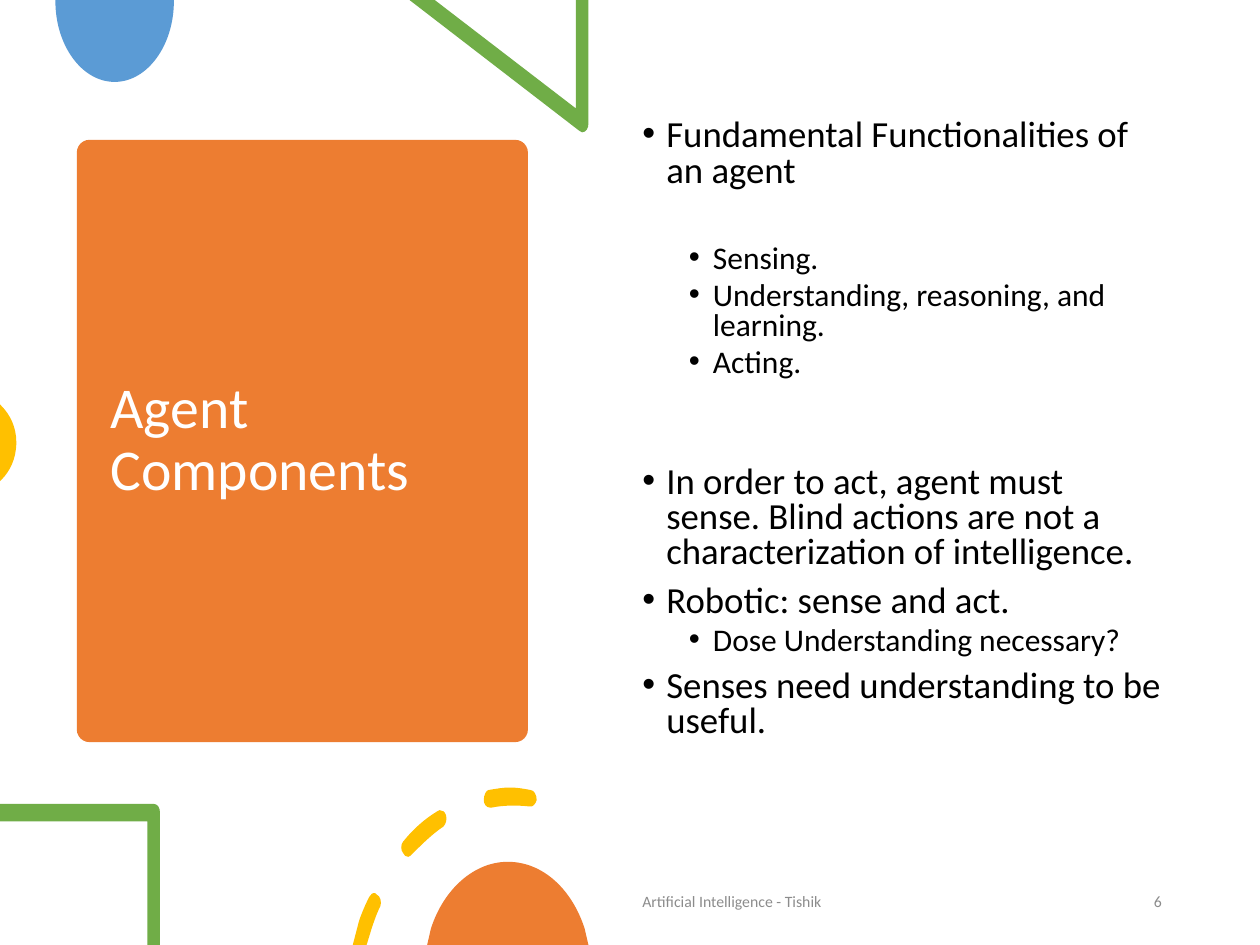
from pptx import Presentation
from pptx.dml.color import RGBColor
from pptx.enum.shapes import MSO_SHAPE as Shape
from pptx.enum.text import MSO_ANCHOR as Anchor, PP_ALIGN as Align
from pptx.util import Inches, Pt
from lxml.etree import SubElement
from pptx.oxml.ns import qn

FONT = "Calibri"
BLUE, GREEN, YELLOW, ORANGE = "5B9BD5", "70AD47", "FFC000", "ED7D31"
WHITE, BLACK, GRAY = "FFFFFF", "000000", "8C8C8C"

TITLE = "Agent Components"
FOOTER, PAGE = "Artificial Intelligence - Tishik", "6"

# Bullets: level, text, extra space above in points
BULLETS = [
    (0, "Fundamental Functionalities of an agent", 0),
    (1, "Sensing.", 27.5),
    (1, "Understanding, reasoning, and learning.", 0),
    (1, "Acting.", 0),
    (0, "In order to act, agent must sense. Blind actions are not a "
        "characterization of intelligence.", 42.2),
    (0, "Robotic: sense and act.", 0),
    (1, "Dose Understanding necessary?", 0),
    (0, "Senses need understanding to be useful.", 0),
]
# Per level: size, space before, left indent in inches
LEVELS = [(21, 7.5, 0.19), (18, 3.8, 0.56)]
HANGING = 0.19

# Decorations: colour and contours in inches; a pair is a corner,
# six numbers are a Bezier curve (two handles, then the end)
BLUE_DROP = (BLUE, [[
    (1.38, 0), (0.44, 0), (0.44, 0.01), (0.44, 0.36, 0.65, 0.65, 0.91, 0.65),
    (1.17, 0.65, 1.38, 0.36, 1.38, 0.01)]])
GREEN_TRIANGLE = (GREEN, [[
    (4.67, 0), (4.57, 0), (4.57, 0.86), (3.45, 0), (3.25, 0), (4.6, 1.04),
    (4.61, 1.05, 4.61, 1.05, 4.62, 1.05), (4.65, 1.05, 4.67, 1.02, 4.67, 0.98)]])
YELLOW_EDGE = (YELLOW, [[
    (0, 3.21), (0, 3.82), (0.01, 3.81), (0.08, 3.74, 0.13, 3.64, 0.13, 3.51),
    (0.13, 3.39, 0.08, 3.29, 0.01, 3.22)]])
GREEN_CORNER = (GREEN, [[
    (1.22, 6.38), (0, 6.38), (0, 6.52), (1.17, 6.52), (1.17, 7.5), (1.27, 7.5),
    (1.27, 6.45), (1.27, 6.41, 1.25, 6.38, 1.22, 6.38)]])
YELLOW_DASHES = (YELLOW, [
    [(2.98, 7.09), (2.96, 7.08, 2.94, 7.1, 2.93, 7.12),
     (2.9, 7.18, 2.87, 7.25, 2.85, 7.31), (2.8, 7.5), (2.91, 7.5), (2.95, 7.37),
     (2.97, 7.31, 2.99, 7.25, 3.02, 7.19), (3.03, 7.16, 3.02, 7.11, 2.99, 7.1),
     (2.99, 7.09, 2.98, 7.09, 2.98, 7.09)],
    [(3.49, 6.43), (3.48, 6.43, 3.48, 6.43, 3.47, 6.44),
     (3.37, 6.5, 3.28, 6.58, 3.2, 6.68), (3.18, 6.7, 3.18, 6.75, 3.2, 6.77),
     (3.21, 6.79, 3.22, 6.8, 3.24, 6.8), (3.24, 6.8),
     (3.25, 6.8, 3.26, 6.79, 3.27, 6.78), (3.35, 6.7, 3.43, 6.62, 3.52, 6.56),
     (3.54, 6.54, 3.55, 6.5, 3.54, 6.47), (3.53, 6.44, 3.51, 6.43, 3.49, 6.43)],
    [(4.05, 6.25), (3.99, 6.25, 3.94, 6.26, 3.88, 6.27),
     (3.86, 6.27, 3.84, 6.31, 3.84, 6.35), (3.84, 6.38, 3.86, 6.41, 3.89, 6.41),
     (3.89, 6.41, 3.9, 6.41, 3.9, 6.41), (4, 6.39, 4.1, 6.39, 4.2, 6.4),
     (4.23, 6.41, 4.25, 6.38, 4.26, 6.35), (4.26, 6.31, 4.24, 6.27, 4.21, 6.27),
     (4.21, 6.27, 4.21, 6.27, 4.21, 6.27), (4.16, 6.26, 4.1, 6.25, 4.05, 6.25)]])
ORANGE_DOME = (ORANGE, [[
    (4.03, 6.84), (3.76, 6.84, 3.52, 7.06, 3.42, 7.37), (3.39, 7.5), (4.67, 7.5),
    (4.64, 7.37), (4.54, 7.06, 4.31, 6.84, 4.03, 6.84)]])
DECORATIONS = [BLUE_DROP, GREEN_TRIANGLE, YELLOW_EDGE]
LOWER_DECORATIONS = [GREEN_CORNER, YELLOW_DASHES, ORANGE_DOME]


def rgb(color):
    return RGBColor.from_string(color)


def paint(shape, color):
    shape.shadow.inherit = False
    shape.fill.solid()
    shape.fill.fore_color.rgb = rgb(color)
    shape.line.fill.background()


def to_points(contour):
    return [(Inches(part[i]), Inches(part[i + 1]))
            for part in contour for i in range(0, len(part), 2)]


def bend_curves(shape, contours):
    """Join each curve's three line segments into one Bezier segment."""
    outline = next(shape._element.iter(qn("a:path")))
    segments = iter(list(outline))
    for contour in contours:
        for part in contour:
            segment = next(segments)
            if len(part) == 6:
                segment.tag = qn("a:cubicBezTo")
                for extra in (next(segments), next(segments)):
                    segment.append(extra[0])
                    outline.remove(extra)
        next(segments)  # the closing mark


def add_outline(slide, color, contours):
    first, *others = map(to_points, contours)
    builder = slide.shapes.build_freeform(*first[0])
    builder.add_line_segments(first[1:], close=True)
    for points in others:
        builder.move_to(*points[0])
        builder.add_line_segments(points[1:], close=True)
    shape = builder.convert_to_shape()
    bend_curves(shape, contours)
    paint(shape, color)


def add_text_box(slide, box, anchor=Anchor.MIDDLE):
    frame = slide.shapes.add_textbox(*map(Inches, box)).text_frame
    frame.word_wrap = True
    frame.vertical_anchor = anchor
    return frame


def write(paragraph, text, size, color):
    paragraph.text = text
    font = paragraph.font
    font.name, font.size, font.color.rgb = FONT, Pt(size), rgb(color)


def add_bullet(paragraph, indent):
    properties = paragraph._p.get_or_add_pPr()
    properties.set("marL", str(Inches(indent)))
    properties.set("indent", str(-Inches(HANGING)))
    SubElement(properties, qn("a:buFont")).set("typeface", "Arial")
    SubElement(properties, qn("a:buChar")).set("char", "•")


presentation = Presentation()
presentation.slide_width, presentation.slide_height = Inches(10), Inches(7.5)
slide = presentation.slides.add_slide(presentation.slide_layouts[6])

# Title panel
panel = slide.shapes.add_shape(Shape.ROUNDED_RECTANGLE,
                               *map(Inches, (0.61, 1.11, 3.58, 4.78)))
panel.adjustments[0] = 0.028
paint(panel, ORANGE)
title = add_text_box(slide, (0.78, 1.22, 3.23, 4.56)).paragraphs[0]
write(title, TITLE, 33, WHITE)
title.line_spacing = 0.9

# Upper decorations
for color, contours in DECORATIONS:
    add_outline(slide, color, contours)

# Bulleted text
body = add_text_box(slide, (5, 0.9, 4.31, 5.35), Anchor.TOP)
body.margin_right = Inches(0.08)
for index, (level, text, extra) in enumerate(BULLETS):
    paragraph = body.add_paragraph() if index else body.paragraphs[0]
    size, space, indent = LEVELS[level]
    paragraph.level = level
    paragraph.line_spacing = 0.8
    paragraph.space_before = Pt(space + extra)
    add_bullet(paragraph, indent)
    write(paragraph, text, size, BLACK)

# Lower decorations
for color, contours in LOWER_DECORATIONS:
    add_outline(slide, color, contours)

# Footer and page number
for text, left, width, align in [(FOOTER, 5, 3.53, Align.LEFT),
                                 (PAGE, 8.62, 0.7, Align.RIGHT)]:
    paragraph = add_text_box(slide, (left, 6.95, width, 0.4)).paragraphs[0]
    write(paragraph, text, 9, GRAY)
    paragraph.alignment = align
    paragraph.space_after = Pt(6)

presentation.save("out.pptx")
